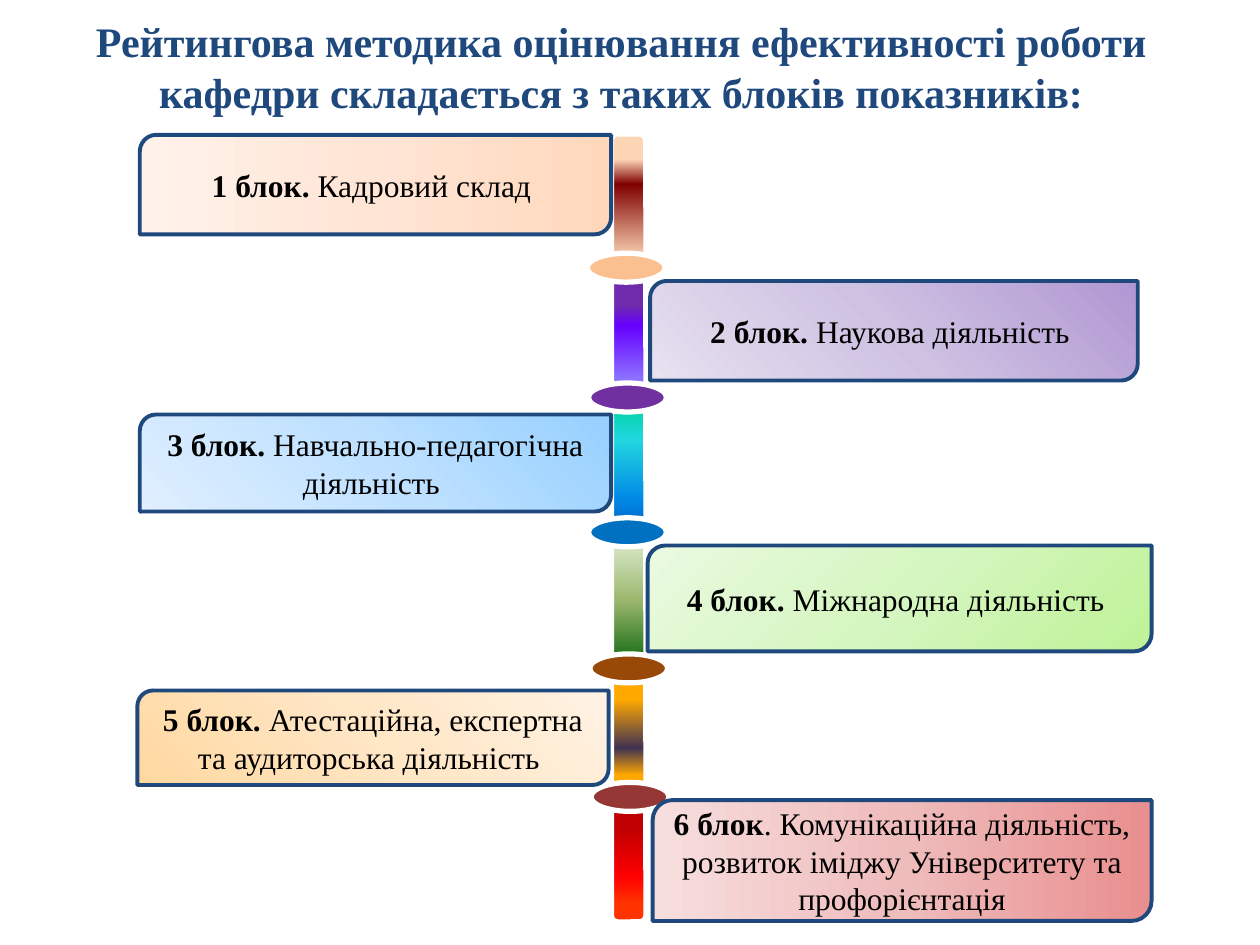
from dataclasses import dataclass
from typing import Optional

from lxml import etree
from pptx import Presentation
from pptx.dml.color import RGBColor
from pptx.enum import shapes, text
from pptx.oxml import ns
from pptx.util import Inches, Pt

FONT = "Times New Roman"
NAVY = RGBColor(0x1F, 0x49, 0x7D)
BLACK = RGBColor(0, 0, 0)
WHITE = RGBColor(0xFF, 0xFF, 0xFF)
PEACH = RGBColor(0xFA, 0xC0, 0x90)
PURPLE = RGBColor(0x70, 0x30, 0xA0)
BLUE = RGBColor(0x00, 0x70, 0xC0)
BROWN = RGBColor(0x98, 0x48, 0x07)
MAROON = RGBColor(0x95, 0x37, 0x35)

BAR_LEFT, BAR_WIDTH, BAR_HEIGHT = 4.86, 0.26, 0.98
DISC_WIDTH, DISC_HEIGHT = 0.62, 0.23

# Corner where a radial gradient starts: left, top, right, bottom in percent
TOP_RIGHT = (100, 0, 0, 100)
BOTTOM_RIGHT = (100, 100, 0, 0)
BOTTOM_LEFT = (0, 100, 100, 0)


@dataclass(frozen=True)
class Gradient:
    stops: dict[int, RGBColor]
    angle: int = 90
    corner: Optional[tuple[int, int, int, int]] = None


@dataclass(frozen=True)
class Block:
    bounds: tuple[float, float, float, float]
    label: str
    name: str
    fill: Gradient


@dataclass(frozen=True)
class Disc:
    left: float
    top: float
    color: RGBColor


def ramp(*stops: tuple[int, str]) -> dict[int, RGBColor]:
    return {position: RGBColor.from_string(color) for position, color in stops}


def thirds(*colors: str) -> dict[int, RGBColor]:
    return ramp(*zip((0, 50, 100), colors))


# Bars of the central pole, by top edge
BARS = {
    1.07: Gradient(ramp((20, "FCD5B5"), (40, "800000"), (100, "FCD5B5"))),
    2.18: Gradient(ramp((25, "6F2BAB"), (41, "6600FF"), (100, "9999FF"))),
    3.24: Gradient(ramp((0, "03D4A8"), (25, "21D6E0"), (75, "0087E6"), (100, "005CBF"))),
    4.27: Gradient(thirds("DDEBCF", "9CB86E", "156B13")),
    5.31: Gradient(ramp((25, "FFA800"), (64, "403152"), (86, "FFA800"))),
    6.33: Gradient(ramp((25, "C00000"), (64, "FF0000"), (86, "FF3300"))),
}

DISCS = [
    Disc(4.66, 2.01, PEACH),
    Disc(4.67, 3.04, PURPLE),
    Disc(4.67, 4.11, BLUE),
    Disc(4.68, 5.19, BROWN),
    Disc(4.69, 6.21, MAROON),
]

BLOCKS = [
    Block((1.11, 1.07, 3.74, 0.79), "1 блок. ", "Кадровий склад ",
          Gradient(thirds("FFD8BC", "FFE5D5", "FFF2EA"), angle=180)),
    Block((5.16, 2.23, 3.87, 0.79), "2 блок. ", "Наукова діяльність ",
          Gradient(thirds("B197D2", "CEC1E2", "E7E1F0"), corner=TOP_RIGHT)),
    Block((1.11, 3.29, 3.74, 0.77), "3 блок. ", "Навчально-педагогічна діяльність ",
          Gradient(thirds("96D0FF", "BFE1FF", "E0EFFF"), corner=TOP_RIGHT)),
    Block((5.14, 4.33, 4, 0.84), "4 блок. ", "Міжнародна діяльність ",
          Gradient(thirds("BEF297", "D5F6C0", "EAFAE0"), corner=BOTTOM_RIGHT)),
    Block((1.09, 5.48, 3.74, 0.75), "5 блок. ", "Атестаційна, експертна та аудиторська діяльність ",
          Gradient(thirds("FFD8A0", "FFE6C5", "FFF2E3"), corner=BOTTOM_LEFT)),
    Block((5.18, 6.35, 3.96, 0.96), "6 блок",
          ". Комунікаційна діяльність, розвиток іміджу Університету та профорієнтація",
          Gradient(thirds("E98F8F", "EFBCBC", "F7DEDE"), angle=180)),
]


def add_child(parent, tag: str, **attributes):
    return etree.SubElement(parent, ns.qn(tag), {key: str(value) for key, value in attributes.items()})


def fill_gradient(shape, gradient: Gradient) -> None:
    shape.fill.gradient()
    node = shape.element.spPr.find(ns.qn("a:gradFill"))
    for child in list(node):
        node.remove(child)
    stop_list = add_child(node, "a:gsLst")
    for position, color in gradient.stops.items():
        stop = add_child(stop_list, "a:gs", pos=position * 1000)
        add_child(stop, "a:srgbClr", val=color)
    if gradient.corner:
        circle = add_child(node, "a:path", path="circle")
        sides = {side: value * 1000 for side, value in zip("ltrb", gradient.corner)}
        add_child(circle, "a:fillToRect", **sides)
    else:
        add_child(node, "a:lin", ang=gradient.angle * 60000, scaled=0)


def add_outlined(page, kind, bounds, line_color: RGBColor, line_width: float):
    shape = page.shapes.add_shape(kind, *map(Inches, bounds))
    shape.shadow.inherit = False
    shape.line.color.rgb = line_color
    shape.line.width = Pt(line_width)
    return shape


def add_span(para, words: str, size: int, color: RGBColor, bold: bool) -> None:
    span = para.add_run()
    span.text = words
    span.font.name = FONT
    span.font.size = Pt(size)
    span.font.bold = bold
    span.font.color.rgb = color


def centre_text(shape):
    frame = shape.text_frame
    frame.word_wrap = True
    frame.vertical_anchor = text.MSO_ANCHOR.MIDDLE
    para = frame.paragraphs[0]
    para.alignment = text.PP_ALIGN.CENTER
    return para


def add_block(page, block: Block) -> None:
    box = add_outlined(page, shapes.MSO_SHAPE.ROUND_2_DIAG_RECTANGLE, block.bounds, NAVY, 2.25)
    fill_gradient(box, block.fill)
    para = centre_text(box)
    add_span(para, block.label, 18, BLACK, True)
    add_span(para, block.name, 18, BLACK, False)


def main() -> None:
    deck = Presentation()
    deck.slide_width, deck.slide_height = Inches(10), Inches(7.5)
    page = deck.slides.add_slide(deck.slide_layouts[5])

    # Title
    title = page.shapes.title
    title.left, title.top, title.width, title.height = map(Inches, (0, 0.02, 9.86, 1.01))
    add_span(centre_text(title),
             "Рейтингова методика оцінювання ефективності роботи кафедри "
             "складається з таких блоків показників:", 24, NAVY, True)

    # Central pole
    for top, gradient in BARS.items():
        bar = add_outlined(page, shapes.MSO_SHAPE.ROUNDED_RECTANGLE,
                           (BAR_LEFT, top, BAR_WIDTH, BAR_HEIGHT), WHITE, 2)
        fill_gradient(bar, gradient)

    # Discs between the bars
    for disc in DISCS:
        oval = add_outlined(page, shapes.MSO_SHAPE.OVAL,
                            (disc.left, disc.top, DISC_WIDTH, DISC_HEIGHT), WHITE, 3)
        oval.fill.solid()
        oval.fill.fore_color.rgb = disc.color

    # Blocks of indicators
    for block in BLOCKS:
        add_block(page, block)

    deck.save("out.pptx")


if __name__ == "__main__":
    main()
